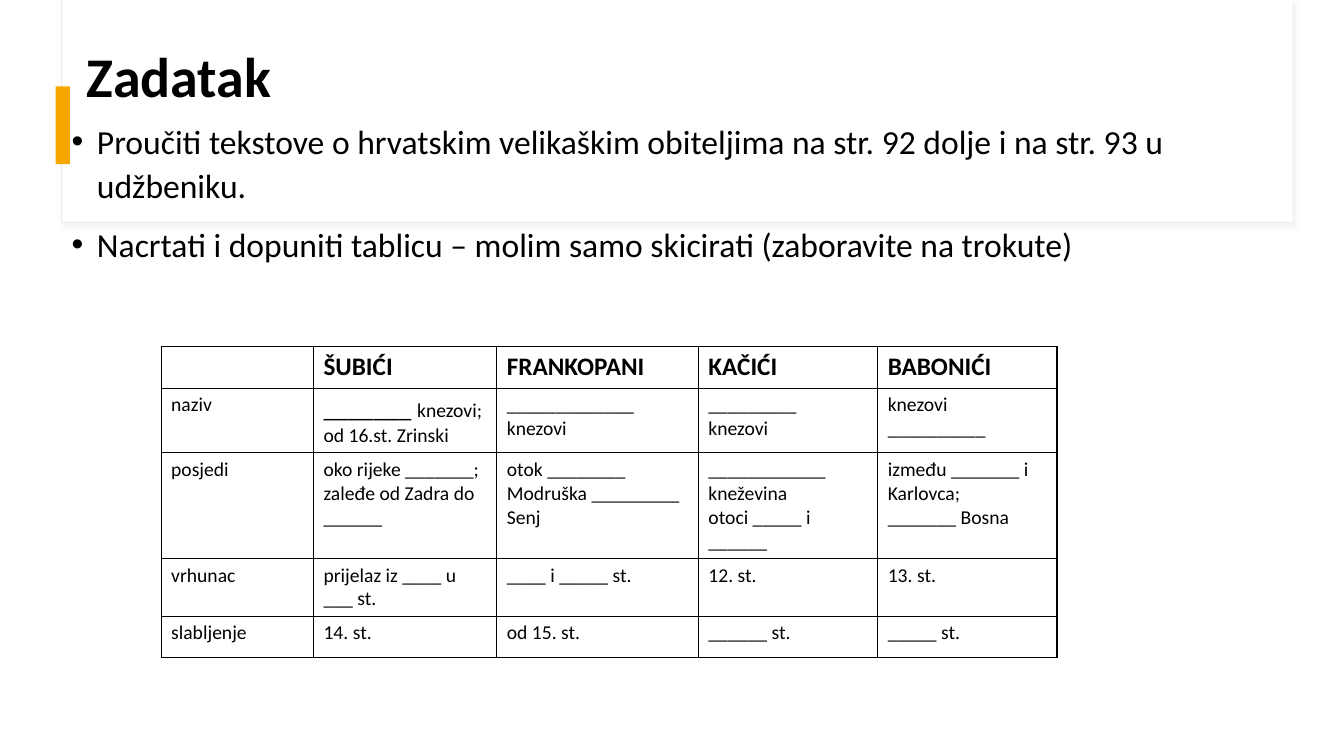
from dataclasses import dataclass
from lxml.etree import SubElement as Sub
from pptx import Presentation
from pptx.dml.color import RGBColor as Rgb
from pptx.enum.shapes import MSO_SHAPE as Kind
from pptx.enum.text import MSO_ANCHOR as Anchor, MSO_AUTO_SIZE as Fit, PP_ALIGN as Align
from pptx.oxml.ns import qn
from pptx.util import Cm, Pt

# Content: a cell is a list of lines, a line is a list of (text, size) runs or plain text
TITLE = "Zadatak"
TASKS = [
    "Proučiti tekstove o hrvatskim velikaškim obiteljima na str. 92 dolje i na str. 93 u udžbeniku.",
    "Nacrtati i dopuniti tablicu – molim samo skicirati (zaboravite na trokute)",
]
ROWS = [
    [[], ["ŠUBIĆI"], ["FRANKOPANI"], ["KAČIĆI"], ["BABONIĆI"]],
    [["naziv"],
     [[("_______ ", 18), ("knezovi;", 14)], "od 16.st. Zrinski"],
     ["_____________ knezovi"],
     ["_________", "knezovi"],
     ["knezovi", "__________"]],
    [["posjedi"],
     ["oko rijeke _______; zaleđe od Zadra do ______"],
     ["otok ________", "Modruška _________", "Senj"],
     ["____________ kneževina", "otoci _____ i ______"],
     ["između _______ i Karlovca;", "_______ Bosna"]],
    [["vrhunac"], ["prijelaz iz ____ u ___ st."], ["____ i _____ st."],
     ["12. st."], ["13. st."]],
    [["slabljenje"], ["14. st."], ["od 15. st."], ["______ st."], ["_____ st."]],
]
WIDTHS = [3.84, 4.62, 5.08, 4.52, 4.52]
HIGH = 1.04


@dataclass
class Theme:
    font: str = "Calibri"
    ink: str = "000000"
    paper: str = "FFFFFF"
    edge: str = "E9E9E9"
    shade: str = "D9D9D9"
    mark: str = "F5A700"
    title: int = 40
    body: int = 24
    head: int = 18
    cell: int = 14


look = Theme()


def write(frame, lines, size, bold=False, space=None, before=None):
    """Fill a text frame, one paragraph a line."""
    for n, line in enumerate(lines):
        para = frame.paragraphs[0] if n == 0 else frame.add_paragraph()
        para.alignment = Align.LEFT
        if space:
            para.line_spacing = space
        if before is not None:
            para.space_before = Pt(before)
        for text, pts in [(line, size)] if isinstance(line, str) else line:
            run = para.add_run()
            run.text = text
            run.font.name = look.font
            run.font.size = Pt(pts)
            run.font.bold = bold
            run.font.color.rgb = Rgb.from_string(look.ink)


def place(shape, left, top, width, height):
    shape.left, shape.top = Cm(left), Cm(top)
    shape.width, shape.height = Cm(width), Cm(height)


def block(box, fill, line=None):
    shape = slide.shapes.add_shape(Kind.RECTANGLE, *map(Cm, box))
    shape.shadow.inherit = False
    shape.fill.solid()
    shape.fill.fore_color.rgb = Rgb.from_string(fill)
    if line:
        shape.line.color.rgb = Rgb.from_string(line)
        shape.line.width = Pt(0.75)
    else:
        shape.line.fill.background()
    return shape


def tint(node, color):
    return Sub(node, qn("a:srgbClr"), val=color)


def border(cell):
    props = cell._tc.get_or_add_tcPr()
    for n, side in enumerate(("lnL", "lnR", "lnT", "lnB")):
        line = props.makeelement(qn("a:" + side), {"w": str(Pt(1))})
        props.insert(n, line)
        tint(Sub(line, qn("a:solidFill")), look.ink)


deck = Presentation()
deck.slide_width, deck.slide_height = Cm(33.87), Cm(19.05)
slide = deck.slides.add_slide(deck.slide_layouts[1])
title, body = slide.placeholders

# Header panel with a soft shadow, and the accent bar
panel = block((1.55, 0, 31.01, 5.61), look.paper, look.edge)
glow = panel._element.spPr.find(qn("a:effectLst"))
soft = Sub(glow, qn("a:outerShdw"), blurRad=str(Pt(4)), dist=str(Pt(3)),
           dir="2700000", algn="tl", rotWithShape="0")
Sub(tint(soft, look.shade), qn("a:alpha"), val="30000")
block((1.57, 0, 30.99, 5.59), look.paper)
block((1.4, 2.18, 0.36, 1.96), look.mark)

# Title and list, brought in front of the panel
for holder in (title, body):
    slide.shapes._spTree.append(holder._element)
    holder.text_frame.auto_size = Fit.NONE
    holder.text_frame.word_wrap = True
place(title, 1.93, 0.36, 28.24, 3.28)
title.text_frame.vertical_anchor = Anchor.MIDDLE
write(title.text_frame, [TITLE], look.title, bold=True, space=0.9)
place(body, 1.55, 2.82, 28.24, 10.26)
body.text_frame.vertical_anchor = Anchor.TOP
write(body.text_frame, TASKS, look.body, space=1.1, before=10)
for para in body.text_frame.paragraphs:
    props = para._p.get_or_add_pPr()
    props.set("marL", str(Cm(0.64)))
    props.set("indent", str(Cm(-0.64)))
    Sub(props, qn("a:buFont"), typeface="Arial")
    Sub(props, qn("a:buChar"), char="•")

# Table of the families
table = slide.shapes.add_table(
    len(ROWS), len(WIDTHS), Cm(4.06), Cm(8.74),
    Cm(sum(WIDTHS)), Cm(HIGH * len(ROWS))).table
table.first_row = table.horz_banding = False
for col, width in zip(table.columns, WIDTHS):
    col.width = Cm(width)
for r, row in enumerate(ROWS):
    table.rows[r].height = Cm(HIGH)
    for c, lines in enumerate(row):
        cell = table.cell(r, c)
        cell.fill.background()
        border(cell)
        write(cell.text_frame, lines, look.cell if r else look.head, bold=r == 0)

deck.save("out.pptx")
